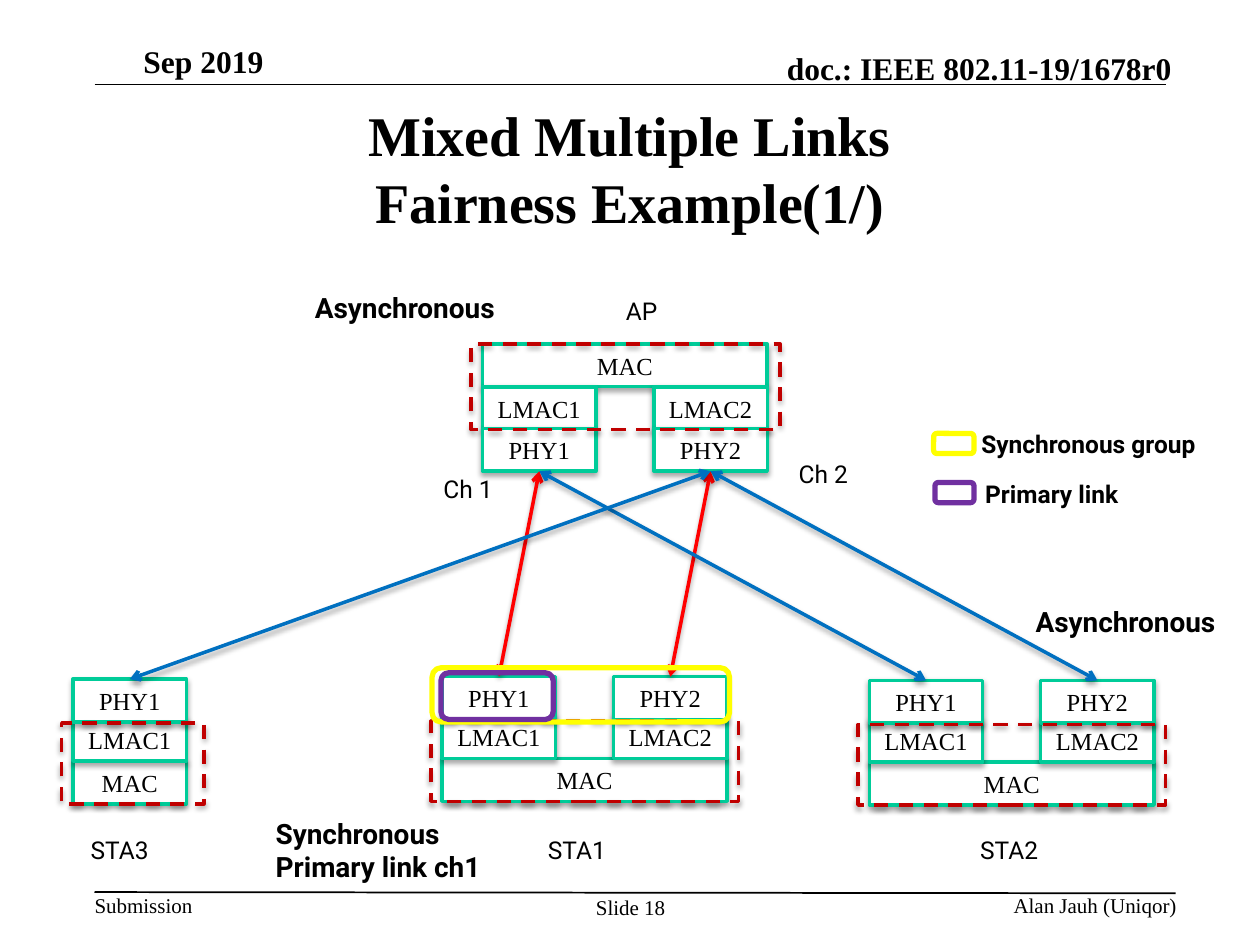
"""Builds the slide on fairness between mixed synchronous and asynchronous links."""
import pptx
import pptx.dml.color
import pptx.enum.dml
import pptx.enum.shapes
import pptx.enum.text
import pptx.oxml
import pptx.util
from lxml import etree

Pt = pptx.util.Pt
SHAPE = pptx.enum.shapes.MSO_SHAPE
ALIGN = pptx.enum.text.PP_ALIGN
ANCHOR = pptx.enum.text.MSO_ANCHOR
COLORS = {"text": "000000", "layer": "00CC99", "paper": "FFFFFF", "outline": "C00000",
          "sync": "FF0000", "async": "0070C0", "group": "FFFF00", "primary": "7030A0"}
SERIF, SANS = "Times New Roman", "Roboto"
COLS, ROWS = 1000, 750
BOX_W, BOX_H, PITCH, MARGIN = 90, 34, 136, 9

RULES = [(75, 67, 925, 67), (75, 708, 933, 709)]
FRAME_TEXTS = [
    ("Submission", (75, 708, 78, 20), 12, False, ALIGN.LEFT, ANCHOR.TOP),
    ("doc.: IEEE 802.11-19/1678r0", (547, 39, 383, 30), 18, True, ALIGN.RIGHT, ANCHOR.BOTTOM),
    ("Sep 2019", (75, 29, 134, 38), 18, True, ALIGN.RIGHT, ANCHOR.MIDDLE),
    ("Mixed Multiple Links\vFairness Example(1/)", (75, 75, 850, 116), 32, True, ALIGN.CENTER, ANCHOR.MIDDLE),
    ("Slide 18", (457, 710, 87, 40), 12, False, ALIGN.CENTER, ANCHOR.TOP),
    ("Alan Jauh (Uniqor)", (586, 708, 348, 20), 12, False, ALIGN.RIGHT, ANCHOR.TOP),
]
LABELS = [
    ("AP", (487, 230, 60, 34), 14, False),
    ("STA1", (425, 658, 71, 34), 14, False),
    ("STA2", (768, 658, 71, 34), 14, False),
    ("STA3", (62, 658, 71, 34), 14, False),
    ("Ch 1", (342, 371, 71, 34), 14, False),
    ("Ch 2", (624, 359, 71, 34), 14, False),
    ("Asynchronous", (240, 226, 185, 37), 16, True),
    ("Asynchronous", (812, 475, 185, 37), 16, True),
    ("Synchronous\nPrimary link ch1", (209, 643, 216, 64), 16, True),
    ("Primary link", (772, 375, 216, 34), 14, True),
    ("Synchronous group", (769, 336, 216, 34), 14, True),
]
FACING_DOWN = {"MAC": 0, "LMAC": 34, "PHY": 67, "outline": (0, 68)}
FACING_UP = {"MAC": 65, "LMAC": 31, "PHY": 0, "outline": (35, 64)}
DEVICES = {
    "AP": (383, 273, 2, 245, FACING_DOWN),
    "STA1": (351, 537, 2, 244, FACING_UP),
    "STA2": (690, 540, 2, 244, FACING_UP),
    "STA3": (58, 539, 1, 113, FACING_UP),
}
LINKS = [("AP", 1, "STA1", 1, "sync"), ("AP", 2, "STA1", 2, "sync"),
         ("AP", 1, "STA2", 1, "async"), ("AP", 2, "STA2", 2, "async"),
         ("STA3", 1, "AP", 2, "async")]
MARKERS = [((742, 383, 31, 16), "primary"), ((741, 344, 32, 16), "group"),
           ((343, 530, 236, 43), "group"), ((350, 534, 89, 37), "primary")]

prs = pptx.Presentation()
prs.slide_width, prs.slide_height = pptx.util.Inches(10), pptx.util.Inches(7.5)
shapes = prs.slides.add_slide(prs.slide_layouts[6]).shapes


def cells(x, y, *rest):
    """Turn grid columns and rows into slide lengths."""
    units = (prs.slide_width // COLS, prs.slide_height // ROWS)
    return [v * units[i % 2] for i, v in enumerate((x, y, *rest))]


def rgb(name):
    return pptx.dml.color.RGBColor.from_string(COLORS[name])


def set_effect(s, shadow):
    tag = pptx.oxml.ns.qn
    effects = etree.SubElement(s._element.spPr, tag("a:effectLst"))
    if shadow:
        outer = etree.SubElement(effects, tag("a:outerShdw"), blurRad=str(Pt(3)),
                                 dist=str(Pt(1.8)), dir="5400000", rotWithShape="0")
        color = etree.SubElement(outer, tag("a:srgbClr"), val=COLORS["text"])
        etree.SubElement(color, tag("a:alpha"), val="35000")


def write(s, text, size, font, bold=False, align=ALIGN.LEFT, anchor=ANCHOR.TOP, inset=None):
    tf = s.text_frame
    tf.text, tf.word_wrap, tf.vertical_anchor = text, True, anchor
    if inset is not None:
        tf.margin_left = tf.margin_right = tf.margin_top = tf.margin_bottom = Pt(inset)
    for p in tf.paragraphs:
        p.alignment = align
        p.font.size, p.font.name, p.font.bold = Pt(size), font, bold
        p.font.color.rgb = rgb("text")


def add_box(kind, at, line, width=2, filled=False, shadow=True):
    s = shapes.add_shape(kind, *cells(*at))
    if filled:
        s.fill.solid()
        s.fill.fore_color.rgb = rgb("paper")
    else:
        s.fill.background()
    s.line.color.rgb, s.line.width = rgb(line), Pt(width)
    set_effect(s, shadow)
    return s


def add_line(ends, color, width, shadow=False):
    s = shapes.add_connector(pptx.enum.shapes.MSO_CONNECTOR.STRAIGHT, *cells(*ends))
    s.line.color.rgb, s.line.width = rgb(color), Pt(width)
    set_effect(s, shadow)
    return s


def add_device(x, y, columns, outline_w, rows):
    phys = {}
    for layer in ("MAC", "LMAC", "PHY"):
        for n in range(1 if layer == "MAC" else columns):
            w = BOX_W + PITCH * (columns - 1) if layer == "MAC" else BOX_W
            s = add_box(SHAPE.RECTANGLE, (x + n * PITCH, y + rows[layer], w, BOX_H), "layer", filled=True)
            name = layer if layer == "MAC" else f"{layer}{n + 1}"
            write(s, name, 14, SERIF, align=ALIGN.CENTER, anchor=ANCHOR.MIDDLE, inset=3.6)
            if layer == "PHY":
                phys[n + 1] = s
    top, height = rows["outline"]
    s = add_box(SHAPE.RECTANGLE, (x - MARGIN, y + top, outline_w, height), "outline")
    s.line.dash_style = pptx.enum.dml.MSO_LINE.DASH
    return phys


def add_link(start, start_site, end, end_site, color):
    s = add_line((0, 0, 0, 0), color, 2, shadow=True)
    s.begin_connect(start, start_site)
    s.end_connect(end, end_site)
    for end_tag in ("a:headEnd", "a:tailEnd"):
        etree.SubElement(s.line._get_or_add_ln(), pptx.oxml.ns.qn(end_tag), type="arrow")


for ends in RULES:
    add_line(ends, "text", 1)
for text, at, size, bold, align, anchor in FRAME_TEXTS:
    write(shapes.add_textbox(*cells(*at)), text, size, SERIF, bold, align, anchor, 0)
phys = {name: add_device(*device) for name, device in DEVICES.items()}
sites = {name: 2 if device[-1] is FACING_DOWN else 0 for name, device in DEVICES.items()}
for a, i, b, j, color in LINKS:
    add_link(phys[a][i], sites[a], phys[b][j], sites[b], color)
for at, color in MARKERS:
    add_box(SHAPE.ROUNDED_RECTANGLE, at, color, width=3, shadow=False)
for text, at, size, bold in LABELS:
    write(shapes.add_textbox(*cells(*at)), text, size, SANS, bold)

prs.save("out.pptx")
